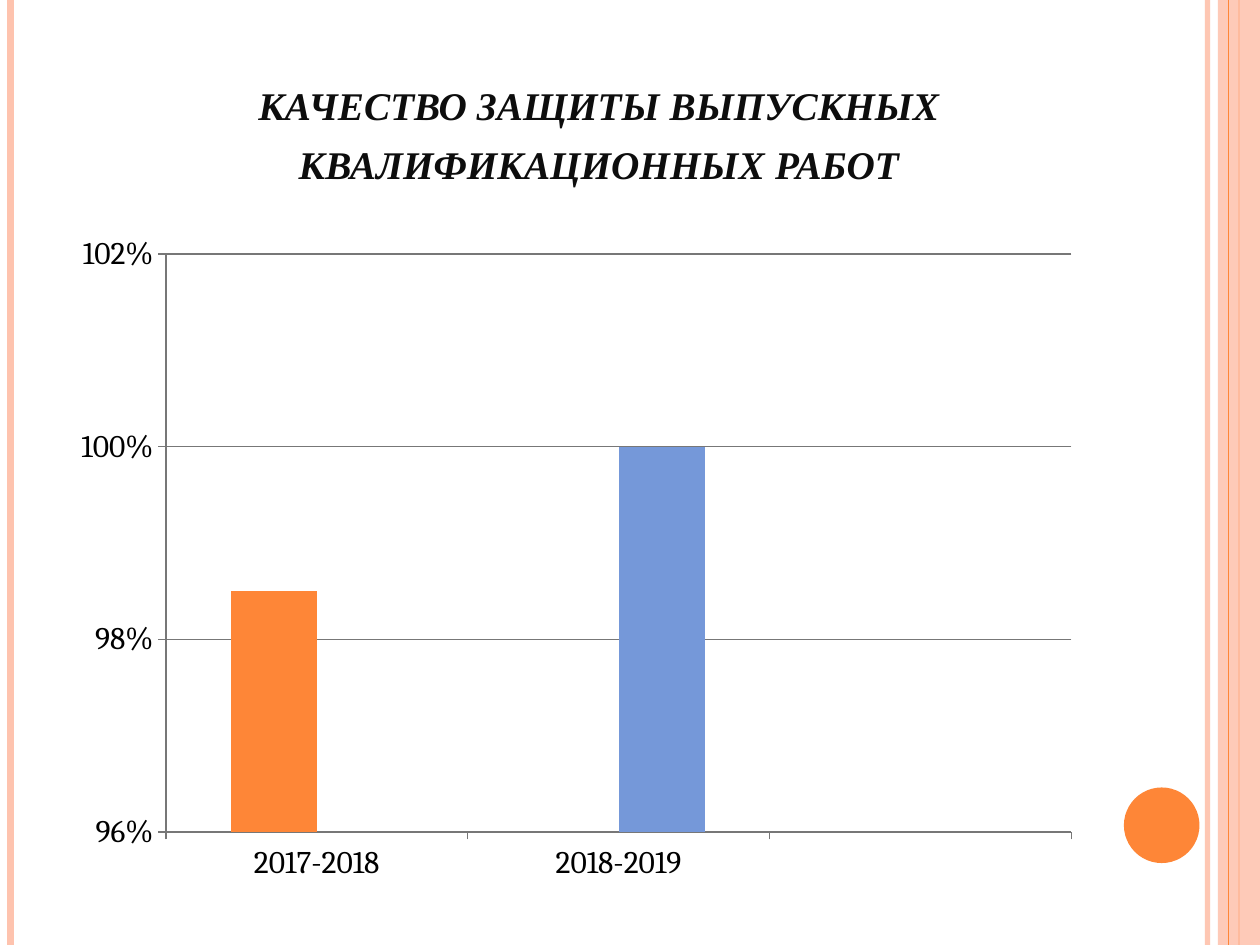
from lxml import etree
from pptx import Presentation
from pptx.chart.data import CategoryChartData
from pptx.dml.color import RGBColor
from pptx.enum.chart import XL_CHART_TYPE, XL_TICK_MARK
from pptx.enum.shapes import MSO_CONNECTOR, MSO_SHAPE
from pptx.enum.text import MSO_ANCHOR, PP_ALIGN
from pptx.oxml import parse_xml
from pptx.oxml.ns import nsdecls, qn
from pptx.util import Pt

COLUMN = XL_CHART_TYPE.COLUMN_CLUSTERED
TICK_OUTSIDE = XL_TICK_MARK.OUTSIDE
STRAIGHT = MSO_CONNECTOR.STRAIGHT
RECTANGLE, OVAL = MSO_SHAPE.RECTANGLE, MSO_SHAPE.OVAL
BOTTOM, CENTER = MSO_ANCHOR.BOTTOM, PP_ALIGN.CENTER

WIDTH, HEIGHT = 720, 540
COLORS = {
    "peach": "FEC3AE",
    "orange": "FE8637",
    "blue": "7598D9",
    "title": "0D0D0D",
    "label": "000000",
    "grid": "777777",
}


def rgb(name):
    return RGBColor.from_string(COLORS[name])


def set_alpha(color_parent, percent):
    """Make the solid colour found inside an XML element partly transparent."""
    color = next(color_parent.iter(qn("a:srgbClr")))
    etree.SubElement(color, qn("a:alpha"), val=str(percent * 1000))


def write_text(frame, text, *, size, font, color, bold=False, italic=False,
               small_caps=False, align=CENTER, anchor=BOTTOM):
    frame.word_wrap = True
    frame.vertical_anchor = anchor
    paragraph = frame.paragraphs[0]
    paragraph.alignment = align
    run = paragraph.add_run()
    run.text = text
    run.font.size, run.font.name = Pt(size), font
    run.font.bold, run.font.italic = bold, italic
    run.font.color.rgb = rgb(color)
    if small_caps:
        run._r.get_or_add_rPr().set("cap", "small")


def add_vertical_line(slide, x, top, height, color, weight, alpha=None):
    line = slide.shapes.add_connector(STRAIGHT, Pt(x), Pt(top), Pt(x), Pt(top + height))
    line.line.color.rgb = rgb(color)
    line.line.width = Pt(weight)
    properties = line._element.spPr
    if alpha:
        set_alpha(properties, alpha)
    etree.SubElement(properties, qn("a:effectLst"))


def add_filled_shape(slide, kind, left, top, width, height, color, alpha=None):
    shape = slide.shapes.add_shape(kind, Pt(left), Pt(top), Pt(width), Pt(height))
    shape.shadow.inherit = False
    shape.fill.solid()
    shape.fill.fore_color.rgb = rgb(color)
    shape.line.fill.background()
    if alpha:
        set_alpha(shape._element.spPr, alpha)


def add_frame(slide, left, top, width, height):
    """Draw the stripes along both sides and the disc at the lower right."""
    right = left + width
    add_vertical_line(slide, right - 30, top, height, "peach", 3, alpha=93)
    add_vertical_line(slide, left + 6, top, height, "peach", 4.5)
    add_vertical_line(slide, right - 12, top, height, "orange", 1.5)
    add_filled_shape(slide, RECTANGLE, right - 24, top, 24, height, "peach", alpha=87)
    add_vertical_line(slide, right - 18, top, height, "orange", 0.75)
    add_filled_shape(slide, OVAL, right - 77.76, top + 450, 43.2, 43.2, "orange")


def place_title(slide, text, left, top, width, height):
    title = slide.shapes.title
    title.left, title.top, title.width, title.height = map(Pt, (left, top, width, height))
    write_text(title.text_frame, text, size=28, font="Times New Roman",
               color="title", bold=True, italic=True, small_caps=True)


def set_plot_layout(chart, **fractions):
    """Fix the inner plot area as fractions of the chart's box."""
    parts = "".join(f'<c:{key} val="{value}"/>' for key, value in fractions.items())
    plot_area = chart._chartSpace.chart.plotArea
    for layout in plot_area.findall(qn("c:layout")):
        plot_area.remove(layout)
    plot_area.insert(0, parse_xml(
        f'<c:layout {nsdecls("c")}><c:manualLayout><c:layoutTarget val="inner"/>'
        f'<c:xMode val="edge"/><c:yMode val="edge"/>{parts}'
        "</c:manualLayout></c:layout>"))


def add_quality_chart(slide, left, top, width, height):
    data = CategoryChartData(number_format="0%")
    data.categories = ["2017-2018", "2018-2019", ""]
    data.add_series("Series 1", [0.985, None, None])
    data.add_series("Series 2", [None, 1, None])
    chart = slide.shapes.add_chart(
        COLUMN, Pt(left), Pt(top), Pt(width), Pt(height), data).chart
    chart.has_legend = chart.has_title = False
    chart.font.size, chart.font.name = Pt(18), "Cambria"
    chart.font.color.rgb = rgb("label")
    set_plot_layout(chart, x=0.1, y=0.05, w=0.88, h=0.86)

    plot = chart.plots[0]
    plot.gap_width, plot.overlap, plot.vary_by_categories = 150, 0, False
    for series, color in zip(plot.series, ("orange", "blue")):
        series.format.fill.solid()
        series.format.fill.fore_color.rgb = rgb(color)

    values = chart.value_axis
    values.minimum_scale, values.maximum_scale, values.major_unit = 0.96, 1.02, 0.02
    values.has_major_gridlines = True
    values.tick_labels.number_format = "0%"
    values.tick_labels.number_format_is_linked = False
    for axis in (values, chart.category_axis):
        axis.major_tick_mark = TICK_OUTSIDE
    for part in (values, chart.category_axis, values.major_gridlines):
        part.format.line.color.rgb = rgb("grid")
        part.format.line.width = Pt(0.75)


def main():
    presentation = Presentation()
    presentation.slide_width, presentation.slide_height = Pt(WIDTH), Pt(HEIGHT)
    title_only = presentation.slide_layouts[5]
    slide = presentation.slides.add_slide(title_only)
    add_frame(slide, 0, 0, WIDTH, HEIGHT)
    place_title(slide, "качество защиты выпускных квалификационных работ",
                60, 21.6, 564.5, 90)
    add_quality_chart(slide, 36, 126, 588, 384)
    presentation.save("out.pptx")


if __name__ == "__main__":
    main()
